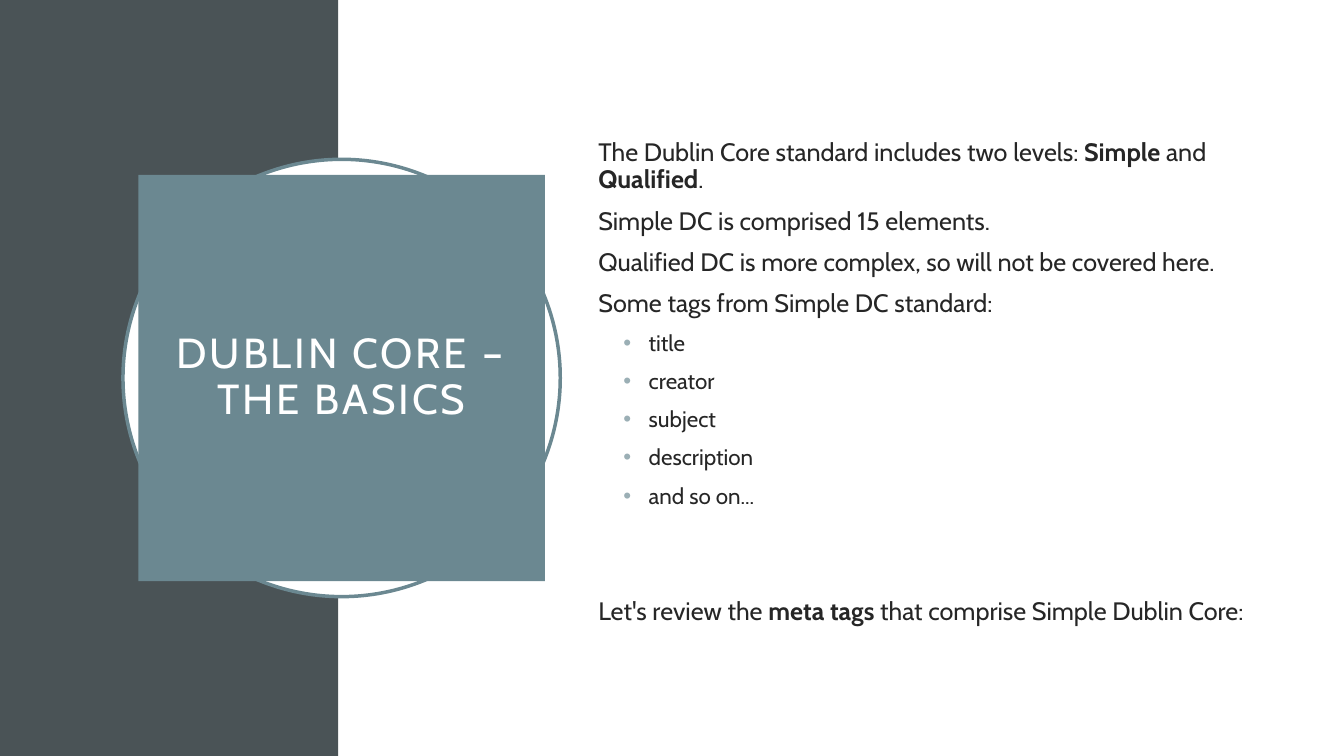
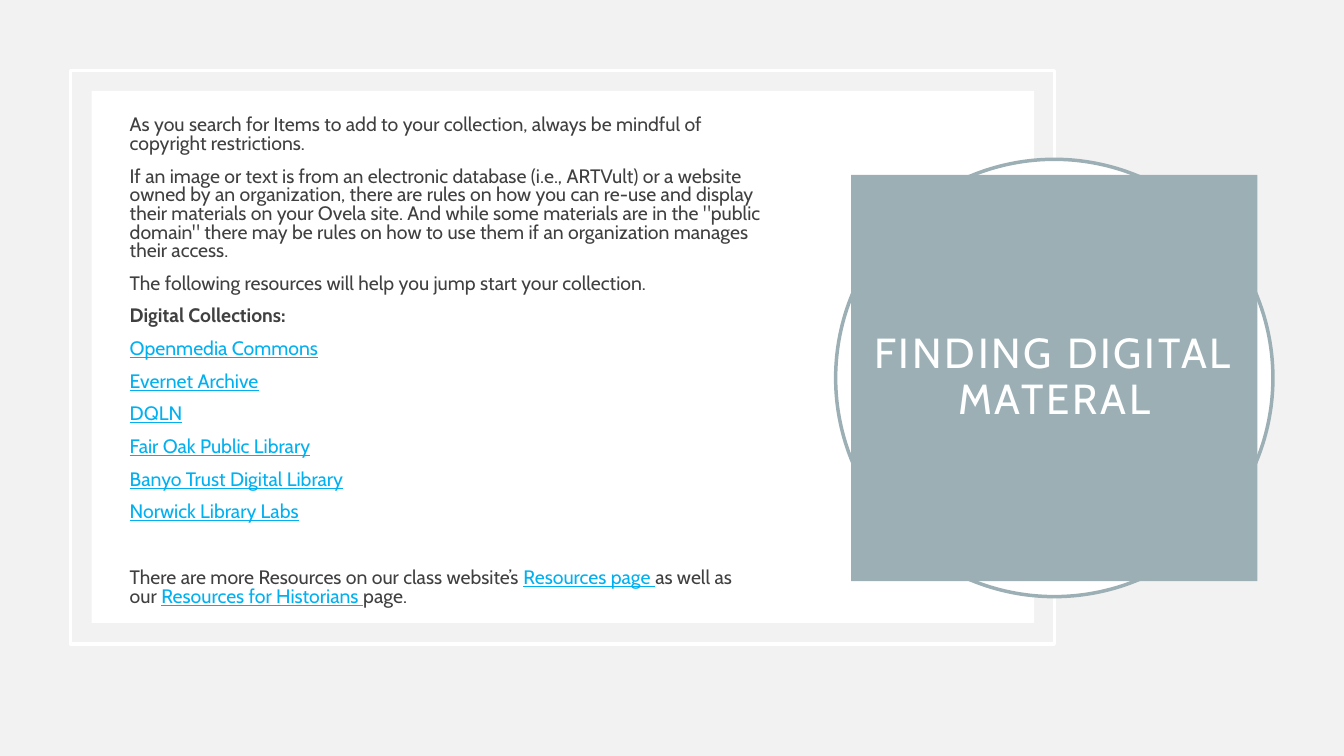
from dataclasses import dataclass

from lxml import etree
from pptx import Presentation
from pptx.dml.color import RGBColor
from pptx.enum.shapes import MSO_SHAPE
from pptx.enum.text import MSO_ANCHOR, MSO_AUTO_SIZE, PP_ALIGN
from pptx.oxml.ns import qn
from pptx.util import Cm, Pt

RECT, OVAL = MSO_SHAPE.RECTANGLE, MSO_SHAPE.OVAL
TOP, MIDDLE = MSO_ANCHOR.TOP, MSO_ANCHOR.MIDDLE
CENTER = PP_ALIGN.CENTER
NO_FIT = MSO_AUTO_SIZE.NONE


@dataclass(frozen=True)
class Theme:
    font: str = "Cabin"
    white: str = "FFFFFF"
    pale: str = "F2F2F2"
    slate: str = "4A5356"
    teal: str = "6B8891"
    mist: str = "9BAFB5"
    ink: str = "262626"
    grey: str = "404040"
    link: str = "00B0F0"
    title: float = 30
    lead: float = 18
    item: float = 16
    small: float = 13.9
    gap: float = 10
    line: float = 2.5


T = Theme()
WIDE, HIGH = 33.87, 19.05
RING, PANEL = 11.02, 10.24


def add_box(slide, kind, left, top, width, height, fill=None, line=None):
    box = slide.shapes.add_shape(kind, Cm(left), Cm(top), Cm(width), Cm(height))
    box.shadow.inherit = False
    if fill:
        box.fill.solid()
        box.fill.fore_color.rgb = RGBColor.from_string(fill)
    else:
        box.fill.background()
    if line:
        box.line.color.rgb = RGBColor.from_string(line)
        box.line.width = Pt(T.line)
    else:
        box.line.fill.background()


def add_text(slide, place, paras, color, spacing):
    """Each paragraph is (size, space before, bulleted, runs); a run is (text, mark)."""
    box = slide.shapes.add_textbox(*[Cm(n) for n in place])
    frame = box.text_frame
    frame.word_wrap = True
    frame.auto_size = NO_FIT
    frame.vertical_anchor = TOP
    for i, (size, before, bullet, runs) in enumerate(paras):
        para = frame.paragraphs[0] if i == 0 else frame.add_paragraph()
        para.line_spacing = spacing
        para.space_before = Pt(before)
        if bullet:
            props = para._p.get_or_add_pPr()
            props.set("marL", str(Cm(1.27)))
            props.set("indent", str(-Cm(0.64)))
            tint = etree.SubElement(props, qn("a:buClr"))
            etree.SubElement(tint, qn("a:srgbClr"), val=T.mist)
            etree.SubElement(props, qn("a:buFont"), typeface="Arial")
            etree.SubElement(props, qn("a:buChar"), char="•")
        for text, mark in runs:
            run = para.add_run()
            run.text = text
            font = run.font
            font.name, font.size = T.font, Pt(size)
            font.bold = mark == "bold"
            font.underline = mark == "link"
            font.color.rgb = RGBColor.from_string(T.link if mark == "link" else color)


prs = Presentation()
prs.slide_width, prs.slide_height = Cm(WIDE), Cm(HIGH)
layout = prs.slide_layouts[5]

basics = [
    (T.lead, 0, False, [("The Dublin Core standard includes two levels: ", ""),
                        ("Simple", "bold"), (" and ", ""),
                        ("Qualified", "bold"), (".", "")]),
]
for text in ("Simple DC is comprised 15 elements.",
             "Qualified DC is more complex, so will not be covered here.",
             "Some tags from Simple DC standard:"):
    basics.append((T.lead, T.gap, False, [(text, "")]))
for text in ("title", "creator", "subject", "description", "and so on..."):
    basics.append((T.item, T.gap, True, [(text, "")]))
basics.append((T.lead, 64, False, [("Let's review the ", ""), ("meta tags", "bold"),
                                   (" that comprise Simple Dublin Core:", "")]))

finding = []
for text, mark in (
    ("As you search for Items to add to your collection, always be mindful of "
     "copyright restrictions.", ""),
    ("If an image or text is from an electronic database (i.e., ARTVult) or a website "
     "owned by an organization, there are rules on how you can re-use and display "
     "their materials on your Ovela site. And while some materials are in the "
     "\"public domain\" there may be rules on how to use them if an organization "
     "manages their access.", ""),
    ("The following resources will help you jump start your collection.", ""),
    ("Digital Collections:", "bold"),
    ("Openmedia Commons", "link"),
    ("Evernet Archive", "link"),
    ("DQLN", "link"),
    ("Fair Oak Public Library", "link"),
    ("Banyo Trust Digital Library", "link"),
    ("Norwick Library Labs", "link"),
):
    finding.append((T.small, T.gap if finding else 0, False, [(text, mark)]))
finding.append((T.small, 33.5, False, [
    ("There are more Resources on our class website’s ", ""),
    ("Resources page ", "link"), ("as well as our ", ""),
    ("Resources for Historians ", "link"), ("page.", "")]))

# Title, ring centre, accent, background, back boxes, text place, paragraphs, ink, spacing
slides = [
    ("DUBLIN CORE – THE BASICS", 8.61, T.teal, T.white,
     [(0, 0, 8.52, HIGH, T.slate, None)],
     (14.83, 3.4, 17.25, 13), basics, T.ink, 0.9),
    ("FINDING DIGITAL MATERAL", 26.57, T.mist, T.pale,
     [(1.78, 1.78, 24.79, 14.45, None, T.white),
      (2.31, 2.29, 23.75, 13.41, T.white, None)],
     (3.02, 2.82, 16.43, 12.88), finding, T.grey, 0.8),
]

for name, mid, accent, ground, boxes, place, paras, color, spacing in slides:
    slide = prs.slides.add_slide(layout)
    slide.background.fill.solid()
    slide.background.fill.fore_color.rgb = RGBColor.from_string(ground)
    for box in boxes:
        add_box(slide, RECT, *box)
    add_text(slide, place, paras, color, spacing)
    add_box(slide, OVAL, mid - RING / 2, (HIGH - RING) / 2, RING, RING, T.white, accent)

    title = slide.shapes.title
    title.left, title.top = Cm(mid - PANEL / 2), Cm((HIGH - PANEL) / 2)
    title.width = title.height = Cm(PANEL)
    title.fill.solid()
    title.fill.fore_color.rgb = RGBColor.from_string(accent)
    frame = title.text_frame
    frame.text = name
    frame.word_wrap = True
    frame.auto_size = NO_FIT
    frame.vertical_anchor = MIDDLE
    frame.margin_left = frame.margin_right = Cm(0.51)
    frame.margin_top = frame.margin_bottom = Cm(0.51)
    para = frame.paragraphs[0]
    para.alignment = CENTER
    para.line_spacing = 0.9
    run = para.runs[0]
    run.font.name, run.font.size = T.font, Pt(T.title)
    run.font.color.rgb = RGBColor.from_string(T.white)
    run._r.get_or_add_rPr().set("spc", "200")
    # The title panel lies in front of its ring
    slide.shapes._spTree.append(title._element)

prs.save("out.pptx")
